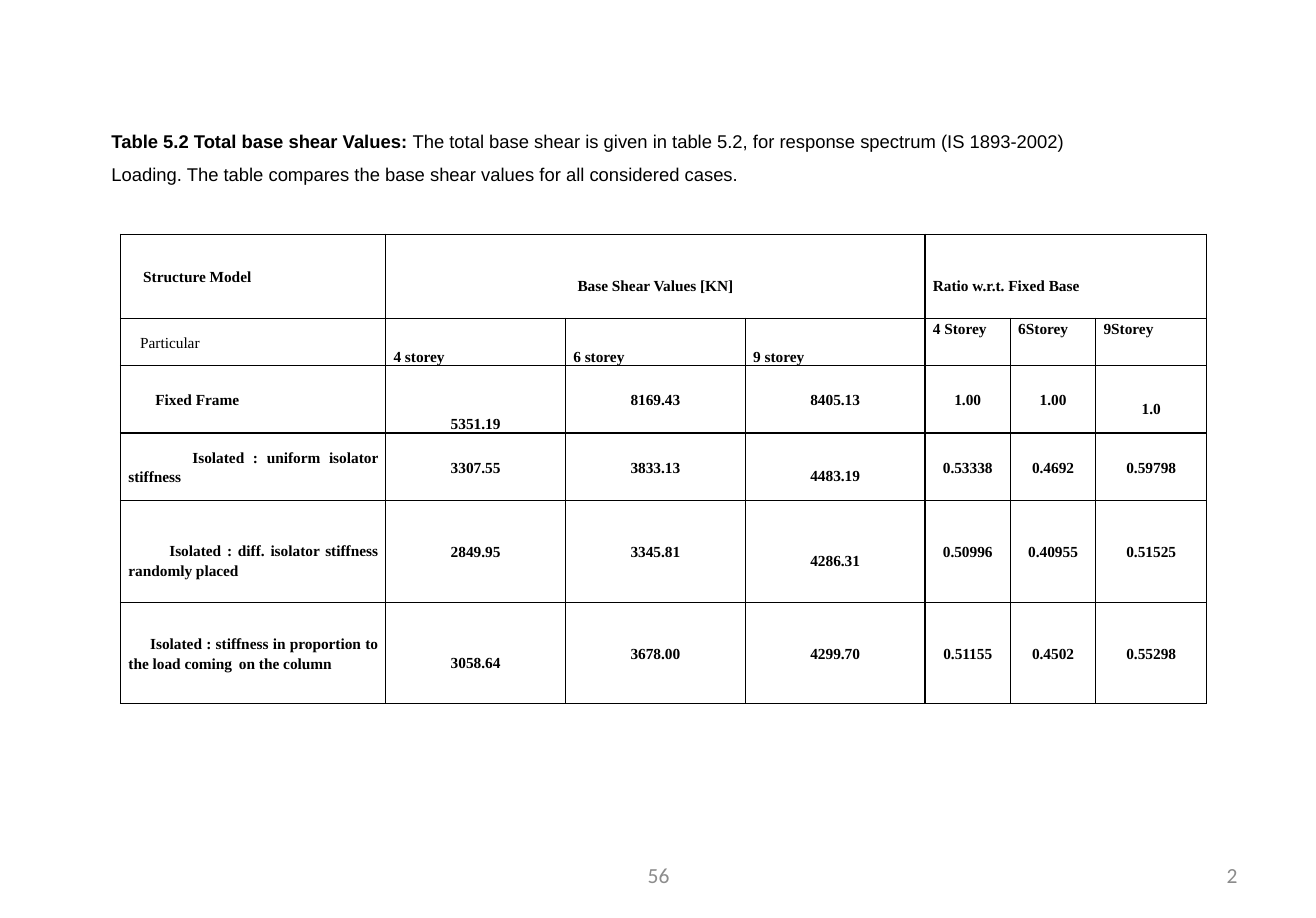
from lxml import etree
from pptx import Presentation
from pptx.dml.color import RGBColor
from pptx.enum import text
from pptx.oxml.ns import qn
from pptx.util import Cm, Pt

# Content
CAPTION = [
    [("Table 5.2 Total base shear Values:", True),
     (" The total base shear is given in table 5.2, for response spectrum (IS 1893-2002)", False)],
    [("Loading. The table compares the base shear values for all considered cases.", False)],
]
SHEAR_ROWS = [
    ("Structure Model", "Base Shear Values [KN]", "", "", "Ratio w.r.t. Fixed Base", "", ""),
    ("Particular", "4 storey", "6 storey", "9 storey", "4 Storey", "6Storey", "9Storey"),
    ("Fixed Frame", "5351.19", "8169.43", "8405.13", "1.00", "1.00", "1.0"),
    ("Isolated : uniform isolator stiffness",
     "3307.55", "3833.13", "4483.19", "0.53338", "0.4692", "0.59798"),
    ("Isolated : diff. isolator stiffness randomly placed",
     "2849.95", "3345.81", "4286.31", "0.50996", "0.40955", "0.51525"),
    ("Isolated : stiffness in proportion to the load coming\ton the column",
     "3058.64", "3678.00", "4299.70", "0.51155", "0.4502", "0.55298"),
]
FOOTERS = [  # text, left, width, alignment
    ("56", 10.34, 9.58, "CENTER"),
    ("2", 21.67, 7.06, "RIGHT"),
]

# Format, lengths in cm
COLORS = {"ink": "000000", "footer": "8C8C8C"}
COLUMN_WIDTHS = [6.09, 4.13, 4.13, 4.13, 1.96, 1.96, 2.55]
ROW_HEIGHTS = [1.93, 1.08, 1.55, 1.55, 2.34, 2.33]
LABEL_INDENTS = [0.34, 0.27, 0.62, 1.47, 0.94, 0.5]
COLUMN_TAB = 3.1
LOWERED = {(0, 1), (0, 4), (2, 6), (3, 3), (4, 0), (4, 3), (5, 1)}
LOWERED_MARGIN = 0.41
BOTTOM = {(1, 1), (1, 2), (1, 3), (2, 1)}
TOP = {(1, 4), (1, 5), (1, 6)}


def write(frame, paragraphs, font="Calibri", size=14, color="ink",
          align="LEFT", spacing=1.0, indent=0, tab=None):
    """Fill a frame with paragraphs, each a list of (words, bold) runs."""
    for number, runs in enumerate(paragraphs):
        paragraph = frame.add_paragraph() if number else frame.paragraphs[0]
        paragraph.alignment = getattr(text.PP_ALIGN, align)
        paragraph.line_spacing = spacing
        paragraph.space_before = paragraph.space_after = Pt(0)
        properties = paragraph._p.get_or_add_pPr()
        properties.set("marL", "0")
        properties.set("indent", str(Cm(indent)))
        if tab:
            tabs = etree.SubElement(properties, qn("a:tabLst"))
            etree.SubElement(tabs, qn("a:tab"), pos=str(Cm(tab)), algn="l")
        for words, bold in runs:
            run = paragraph.add_run()
            run.text = words
            run.font.name, run.font.size, run.font.bold = font, Pt(size), bold
            run.font.color.rgb = RGBColor.from_string(COLORS[color])


def add_borders(cell):
    properties = cell._tc.get_or_add_tcPr()
    for side in ("a:lnL", "a:lnR", "a:lnT", "a:lnB"):
        line = etree.SubElement(properties, qn(side), w=str(Pt(1)))
        fill = etree.SubElement(line, qn("a:solidFill"))
        etree.SubElement(fill, qn("a:srgbClr"), val=COLORS["ink"])


def cell_align(row, column):
    if column == 0:
        return "JUSTIFY"
    return "LEFT" if row == 1 or (row, column) == (0, 4) else "CENTER"


def cell_anchor(place):
    if place in BOTTOM:
        return text.MSO_ANCHOR.BOTTOM
    return text.MSO_ANCHOR.TOP if place in TOP else text.MSO_ANCHOR.MIDDLE


deck = Presentation()
deck.slide_width, deck.slide_height = Cm(30.23), Cm(21.08)
slide = deck.slides.add_slide(deck.slide_layouts[5])

# Caption
caption = slide.shapes.title
caption.left, caption.top, caption.width, caption.height = Cm(2.26), Cm(2.57), Cm(26.44), Cm(1.85)
caption_frame = caption.text_frame
caption_frame.word_wrap = True
caption_frame.auto_size = text.MSO_AUTO_SIZE.NONE
caption_frame.vertical_anchor = text.MSO_ANCHOR.MIDDLE
caption_frame.margin_left = caption_frame.margin_right = Cm(0.3)
caption_frame.margin_top = caption_frame.margin_bottom = Cm(0.15)
write(caption_frame, CAPTION, font="Arial", size=12, spacing=1.5)

# Base shear table
shear = slide.shapes.add_table(
    len(ROW_HEIGHTS), len(COLUMN_WIDTHS), Cm(2.77), Cm(5.38),
    Cm(sum(COLUMN_WIDTHS)), Cm(sum(ROW_HEIGHTS))).table
shear.first_row = shear.horz_banding = False
for column, width in zip(shear.columns, COLUMN_WIDTHS):
    column.width = Cm(width)
for row, height in zip(shear.rows, ROW_HEIGHTS):
    row.height = Cm(height)
for first in (1, 4):
    shear.cell(0, first).merge(shear.cell(0, first + 2))

for r, values in enumerate(SHEAR_ROWS):
    for c, value in enumerate(values):
        cell = shear.cell(r, c)
        cell.margin_left = cell.margin_right = Cm(0.18)
        cell.margin_top = Cm(LOWERED_MARGIN if (r, c) in LOWERED else 0)
        cell.margin_bottom = Cm(0)
        cell.vertical_anchor = cell_anchor((r, c))
        add_borders(cell)
        cell.fill.background()
        write(cell.text_frame, [[(value, value != "Particular")]] if value else [[]],
              font="Times New Roman", size=10, spacing=1.15, align=cell_align(r, c),
              indent=0 if c else LABEL_INDENTS[r], tab=COLUMN_TAB if "\t" in value else None)

# Page numbers
for number, left, width, align in FOOTERS:
    footer = slide.shapes.add_textbox(Cm(left), Cm(19.53), Cm(width), Cm(1.12)).text_frame
    footer.word_wrap = True
    footer.vertical_anchor = text.MSO_ANCHOR.MIDDLE
    footer.margin_left = footer.margin_right = Cm(0.3)
    write(footer, [[(number, False)]], color="footer", align=align)

deck.save("out.pptx")
